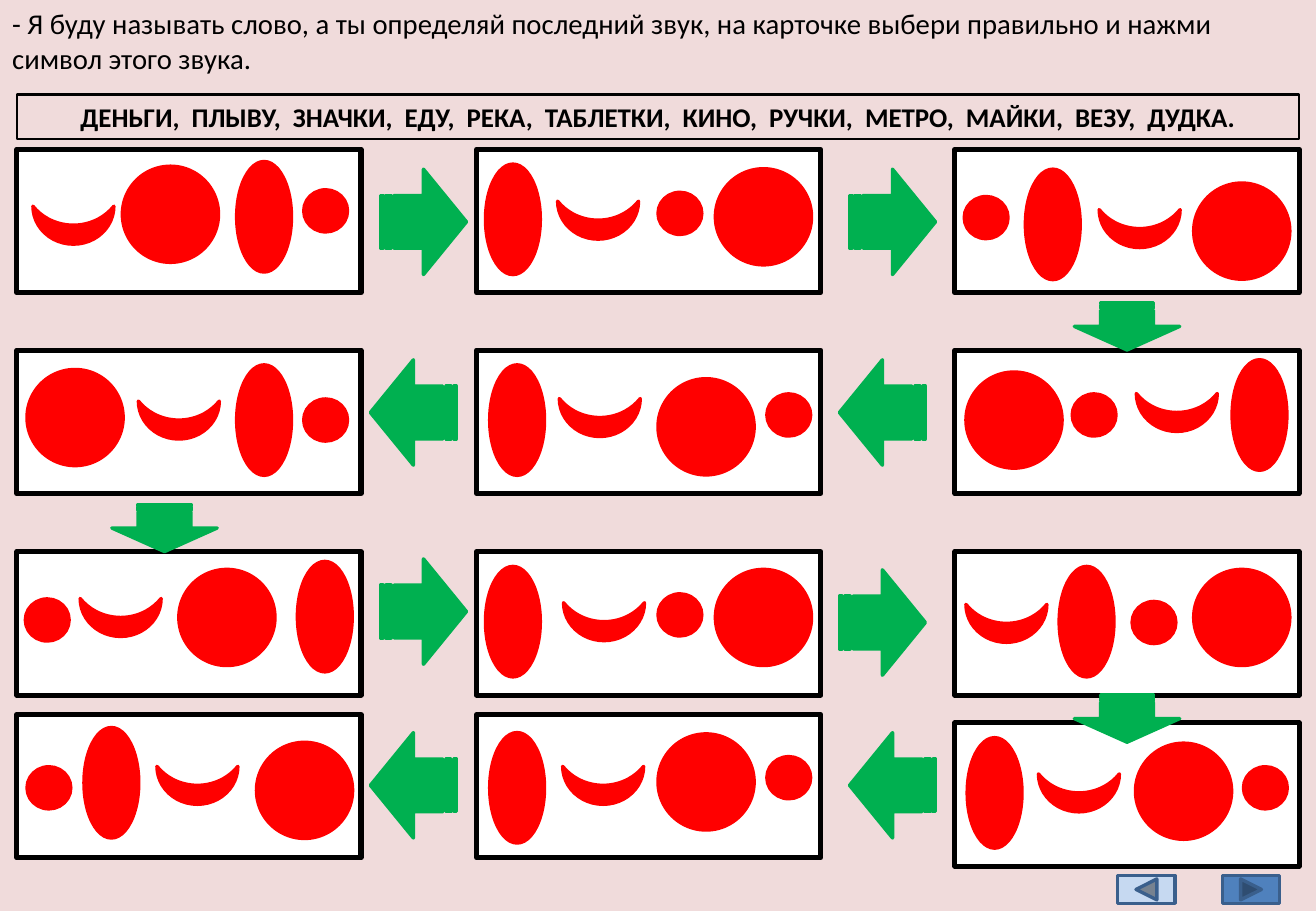
from typing import NamedTuple

from pptx import Presentation
from pptx.dml.color import RGBColor
from pptx.enum import shapes, text
from pptx.util import Pt

Shape = shapes.MSO_SHAPE
FONT = "Calibri"
BLACK, WHITE, RED, GREEN = "000000", "FFFFFF", "FF0000", "00B050"
PINK, BUTTON_LINE = "F0DBDB", "3A5F8C"

INSTRUCTION = ("- Я буду называть слово, а ты определяй последний звук, "
               "на карточке выбери правильно и нажми символ этого звука.")
WORDS = ("ДЕНЬГИ,  ПЛЫВУ,  ЗНАЧКИ,  ЕДУ,  РЕКА,  ТАБЛЕТКИ,  КИНО,  "
         "РУЧКИ,  МЕТРО,  МАЙКИ,  ВЕЗУ,  ДУДКА.")


class Box(NamedTuple):
    left: float
    top: float
    width: float
    height: float


class Kind(NamedTuple):
    preset: Shape
    width: float
    height: float
    rotation: float = 0


class Symbol(NamedTuple):
    """A sound symbol, centred at x, y from its card's corner."""
    kind: Kind
    x: float
    y: float


class Card(NamedTuple):
    left: float
    top: float
    symbols: tuple[Symbol, ...]


class Arrow(NamedTuple):
    kind: Kind
    x: float
    y: float


class Button(NamedTuple):
    preset: Shape
    left: float
    fill: str


SMALL = Kind(Shape.OVAL, 26, 25)
BIG = Kind(Shape.OVAL, 57, 57)
TALL = Kind(Shape.OVAL, 32.5, 65.5)
MOON = Kind(Shape.MOON, 22.5, 48, 270)
RIGHT = Kind(Shape.STRIPED_RIGHT_ARROW, 51, 62.5)
LEFT = RIGHT._replace(rotation=180)
DOWN = Kind(Shape.STRIPED_RIGHT_ARROW, 28, 62.5, 90)

CARD_WIDTH, CARD_HEIGHT = 204, 85
COLUMNS = (10, 282.5, 566)
ROWS = (88.5, 207.5, 327, 423.5)
LAST_ROW_RIGHT = 428.5


def card(column: int, row: int, *symbols: tuple[Kind, float, float],
         top: float | None = None) -> Card:
    return Card(COLUMNS[column], ROWS[row] if top is None else top,
                tuple(Symbol(*symbol) for symbol in symbols))


CARDS = (
    card(0, 0, (MOON, 33.5, 45), (BIG, 91, 38.5), (TALL, 146.5, 40), (SMALL, 183, 36.5)),
    card(1, 0, (TALL, 21.5, 41.5), (MOON, 72, 42), (SMALL, 120.5, 38), (BIG, 170, 40)),
    card(2, 0, (SMALL, 18.5, 40.5), (TALL, 58, 44.5), (MOON, 109.5, 47), (BIG, 170, 48.5)),
    card(2, 1, (BIG, 35, 41.5), (SMALL, 82.5, 38.5), (MOON, 131.5, 37), (TALL, 180.5, 38.5)),
    card(1, 1, (TALL, 24, 41.5), (MOON, 73, 40), (BIG, 136, 45.5), (SMALL, 185, 38.5)),
    card(0, 1, (BIG, 34.5, 40), (MOON, 96, 41.5), (TALL, 146.5, 41.5), (SMALL, 183, 41.5)),
    card(0, 2, (SMALL, 18, 40.5), (MOON, 61.5, 39), (BIG, 124.5, 39), (TALL, 182.5, 38.5)),
    card(1, 2, (TALL, 21.5, 41.5), (MOON, 75.5, 41.5), (SMALL, 120.5, 37.5), (BIG, 170, 39)),
    card(2, 2, (MOON, 30.5, 42.5), (TALL, 78, 41.5), (SMALL, 118, 42), (BIG, 170, 39)),
    card(2, 3, (TALL, 23.5, 41.5), (MOON, 73.5, 41.5), (BIG, 135.5, 40.5), (SMALL, 184, 38.5),
         top=LAST_ROW_RIGHT),
    card(1, 3, (TALL, 24, 43.5), (MOON, 75, 42), (BIG, 136, 40), (SMALL, 185, 37.5)),
    card(0, 3, (SMALL, 19, 43.5), (TALL, 56, 40.5), (MOON, 107, 42), (BIG, 170.5, 45)),
)

ARROWS = (
    Arrow(RIGHT, 251, 131.5), Arrow(RIGHT, 529, 131.5), Arrow(DOWN, 668, 193.5),
    Arrow(LEFT, 523, 244.5), Arrow(LEFT, 245, 244.5), Arrow(DOWN, 97.5, 313),
    Arrow(RIGHT, 251, 362.5), Arrow(RIGHT, 523, 369), Arrow(DOWN, 668, 426),
    Arrow(LEFT, 529, 465.5), Arrow(LEFT, 245, 465.5),
)

BUTTONS = (
    Button(Shape.ACTION_BUTTON_FORWARD_OR_NEXT, 724.5, "4F81BD"),
    Button(Shape.ACTION_BUTTON_BACK_OR_PREVIOUS, 662.5, "C6D9F1"),
)


def color(value: str) -> RGBColor:
    return RGBColor.from_string(value)


def place(shape, box: Box) -> None:
    shape.left, shape.top, shape.width, shape.height = map(Pt, box)


def add_figure(slide, preset: Shape, box: Box, fill: str | None,
               line: str, line_width: float = 2):
    shape = slide.shapes.add_shape(preset, *map(Pt, box))
    shape.shadow.inherit = False
    if fill is None:
        shape.fill.background()
    else:
        shape.fill.solid()
        shape.fill.fore_color.rgb = color(fill)
    shape.line.color.rgb = color(line)
    shape.line.width = Pt(line_width)
    return shape


def add_centred(slide, kind: Kind, x: float, y: float, fill: str) -> None:
    box = Box(x - kind.width / 2, y - kind.height / 2, kind.width, kind.height)
    add_figure(slide, kind.preset, box, fill, fill).rotation = kind.rotation


def write(shape, content: str, size: float, alignment: text.PP_ALIGN,
          anchor: text.MSO_ANCHOR, bold: bool = False) -> None:
    frame = shape.text_frame
    frame.word_wrap = True
    frame.auto_size = text.MSO_AUTO_SIZE.NONE
    frame.vertical_anchor = anchor
    paragraph = frame.paragraphs[0]
    paragraph.alignment = alignment
    run = paragraph.add_run()
    run.text = content
    run.font.name = FONT
    run.font.size = Pt(size)
    run.font.bold = bold
    run.font.color.rgb = color(BLACK)


def main() -> None:
    presentation = Presentation()
    presentation.slide_width, presentation.slide_height = Pt(780), Pt(540)
    slide = presentation.slides.add_slide(presentation.slide_layouts[5])
    slide.background.fill.solid()
    slide.background.fill.fore_color.rgb = color(PINK)

    title = slide.shapes.title
    place(title, Box(0, 0, 775.5, 48))
    write(title, INSTRUCTION, 17, text.PP_ALIGN.LEFT, text.MSO_ANCHOR.TOP)

    word_bar = add_figure(slide, Shape.RECTANGLE, Box(10, 56, 760, 26.5), None, BLACK, 1.5)
    write(word_bar, WORDS, 16, text.PP_ALIGN.CENTER, text.MSO_ANCHOR.MIDDLE, bold=True)

    for item in CARDS:
        add_figure(slide, Shape.RECTANGLE,
                   Box(item.left, item.top, CARD_WIDTH, CARD_HEIGHT), WHITE, BLACK, 3)
        for symbol in item.symbols:
            add_centred(slide, symbol.kind, item.left + symbol.x, item.top + symbol.y, RED)
    for arrow in ARROWS:
        add_centred(slide, arrow.kind, arrow.x, arrow.y, GREEN)
    for button in BUTTONS:
        add_figure(slide, button.preset, Box(button.left, 519, 34, 16.5),
                   button.fill, BUTTON_LINE)

    presentation.save("out.pptx")


if __name__ == "__main__":
    main()
